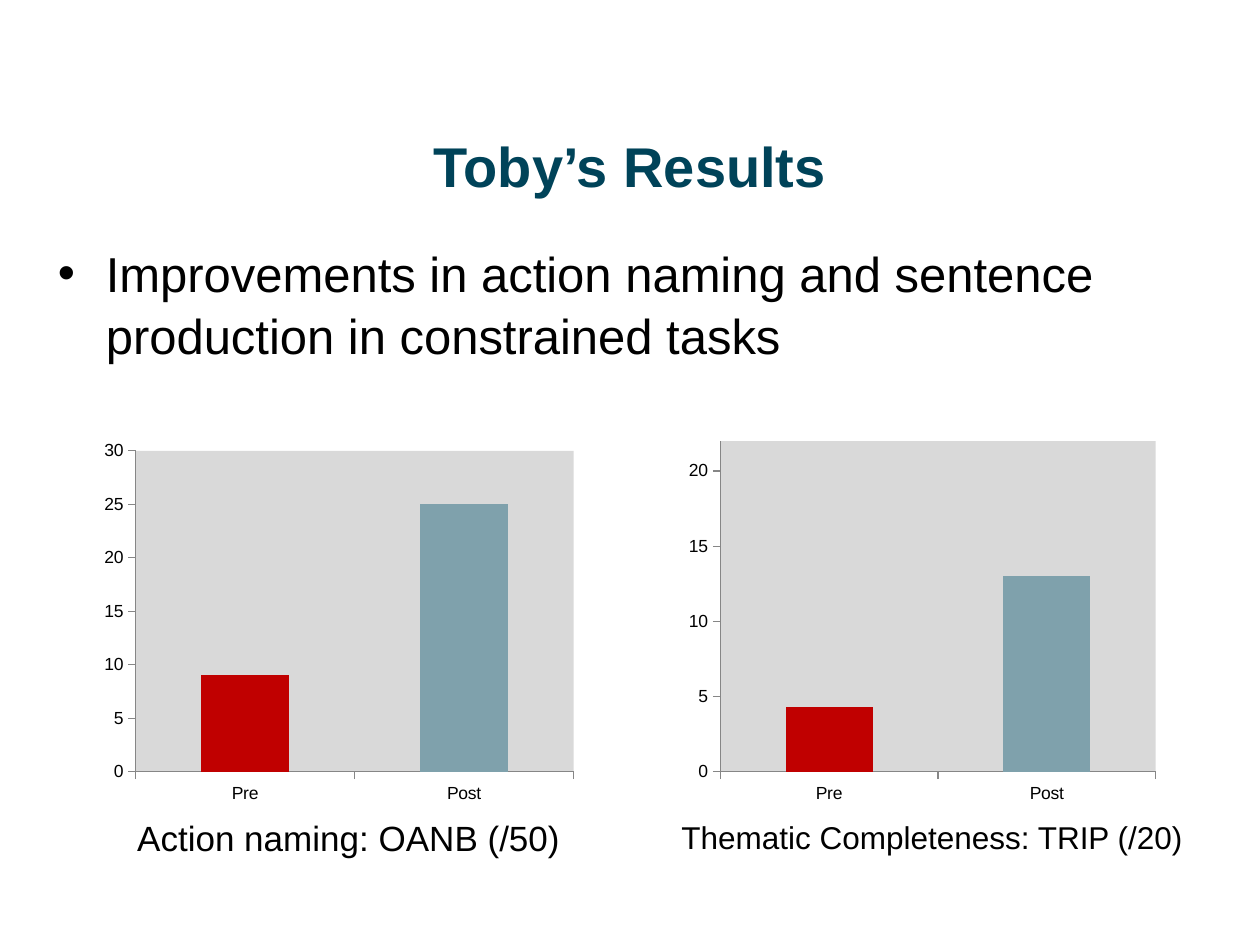
from lxml import etree
from pptx import Presentation
from pptx.chart.data import CategoryChartData
from pptx.dml.color import RGBColor
from pptx.enum.chart import XL_CHART_TYPE, XL_TICK_MARK
from pptx.enum.text import MSO_ANCHOR, MSO_AUTO_SIZE, PP_ALIGN
from pptx.oxml import parse_xml
from pptx.oxml.ns import nsdecls, qn
from pptx.util import Inches, Pt

COLUMN = XL_CHART_TYPE.COLUMN_CLUSTERED
OUTSIDE, NO_TICK = XL_TICK_MARK.OUTSIDE, XL_TICK_MARK.NONE
TOP, CENTER, LEFT = MSO_ANCHOR.TOP, PP_ALIGN.CENTER, PP_ALIGN.LEFT
NO_FIT = MSO_AUTO_SIZE.NONE

TEAL = RGBColor(0x00, 0x43, 0x59)
BLACK = RGBColor(0x00, 0x00, 0x00)
RED = RGBColor(0xC0, 0x00, 0x00)
BLUE_GRAY = RGBColor(0x7F, 0xA1, 0xAC)
AXIS_GRAY = RGBColor(0x86, 0x86, 0x86)
PLOT_GRAY = RGBColor(0xD9, 0xD9, 0xD9)


def place(sp, left, top, width, height):
    sp.left, sp.top = Inches(left), Inches(top)
    sp.width, sp.height = Inches(width), Inches(height)


def write(sp, text, size, color, align=LEFT, bold=False):
    tf = sp.text_frame
    tf.word_wrap = True
    tf.auto_size = NO_FIT
    tf.vertical_anchor = TOP
    p = tf.paragraphs[0]
    p.text = text
    p.alignment = align
    p.space_before = Pt(0)
    p.font.name = "Arial"
    p.font.size = Pt(size)
    p.font.bold = bold
    p.font.color.rgb = color
    return p


prs = Presentation()
prs.slide_width, prs.slide_height = Inches(10), Inches(7.5)
s = prs.slides.add_slide(prs.slide_layouts[1])

title, body = s.placeholders
place(title, 0.36, 0.99, 9.28, 1.42)
write(title, "Toby’s Results", 32, TEAL, CENTER, True)

place(body, 0.36, 1.86, 9.28, 0.87)
p = write(body, "Improvements in action naming and sentence production in constrained tasks", 28, BLACK)
p.line_spacing = 1.05
pPr = p._p.get_or_add_pPr()
pPr.set("marL", str(Inches(0.38)))
pPr.set("indent", str(-Inches(0.38)))

charts = [
    (5.39, 3.86, (4.3, 13), 22),
    (0.75, 3.88, (9, 25), 30),
]
for left, width, values, top_value in charts:
    data = CategoryChartData()
    data.categories = ["Pre", "Post"]
    data.add_series("Series 1", values)
    chart = s.shapes.add_chart(
        COLUMN, Inches(left), Inches(3.44), Inches(width), Inches(3), data
    ).chart
    chart.has_legend = False
    chart.has_title = False
    chart.font.name = "Arial"
    chart.font.size = Pt(10)
    chart.font.color.rgb = BLACK

    plot = chart.plots[0]
    plot.gap_width = 150
    plot.vary_by_categories = False
    series = plot.series[0]
    for fmt, color in ((series.format, BLUE_GRAY), (series.points[0].format, RED)):
        fmt.fill.solid()
        fmt.fill.fore_color.rgb = color

    for axis in (chart.category_axis, chart.value_axis):
        axis.has_major_gridlines = False
        axis.major_tick_mark = OUTSIDE
        axis.minor_tick_mark = NO_TICK
        axis.format.line.color.rgb = AXIS_GRAY
        axis.format.line.width = Pt(0.75)
    chart.value_axis.minimum_scale = 0
    chart.value_axis.maximum_scale = top_value
    chart.value_axis.major_unit = 5

    plot_area = chart._chartSpace.find(".//" + qn("c:plotArea"))
    spPr = parse_xml(f"<c:spPr {nsdecls('c', 'a')}/>")
    fill = etree.SubElement(spPr, qn("a:solidFill"))
    etree.SubElement(fill, qn("a:srgbClr"), val=str(PLOT_GRAY))
    plot_area.append(spPr)

captions = [
    ("Action naming: OANB (/50)", 20, 0.99, 6.43, 3.61, 0.87),
    ("Thematic Completeness: TRIP (/20)", 18, 5.31, 6.44, 4.25, 0.4),
]
for text, size, *box in captions:
    sp = s.shapes.add_textbox(*[Inches(v) for v in box])
    write(sp, text, size, BLACK)

prs.save("out.pptx")
